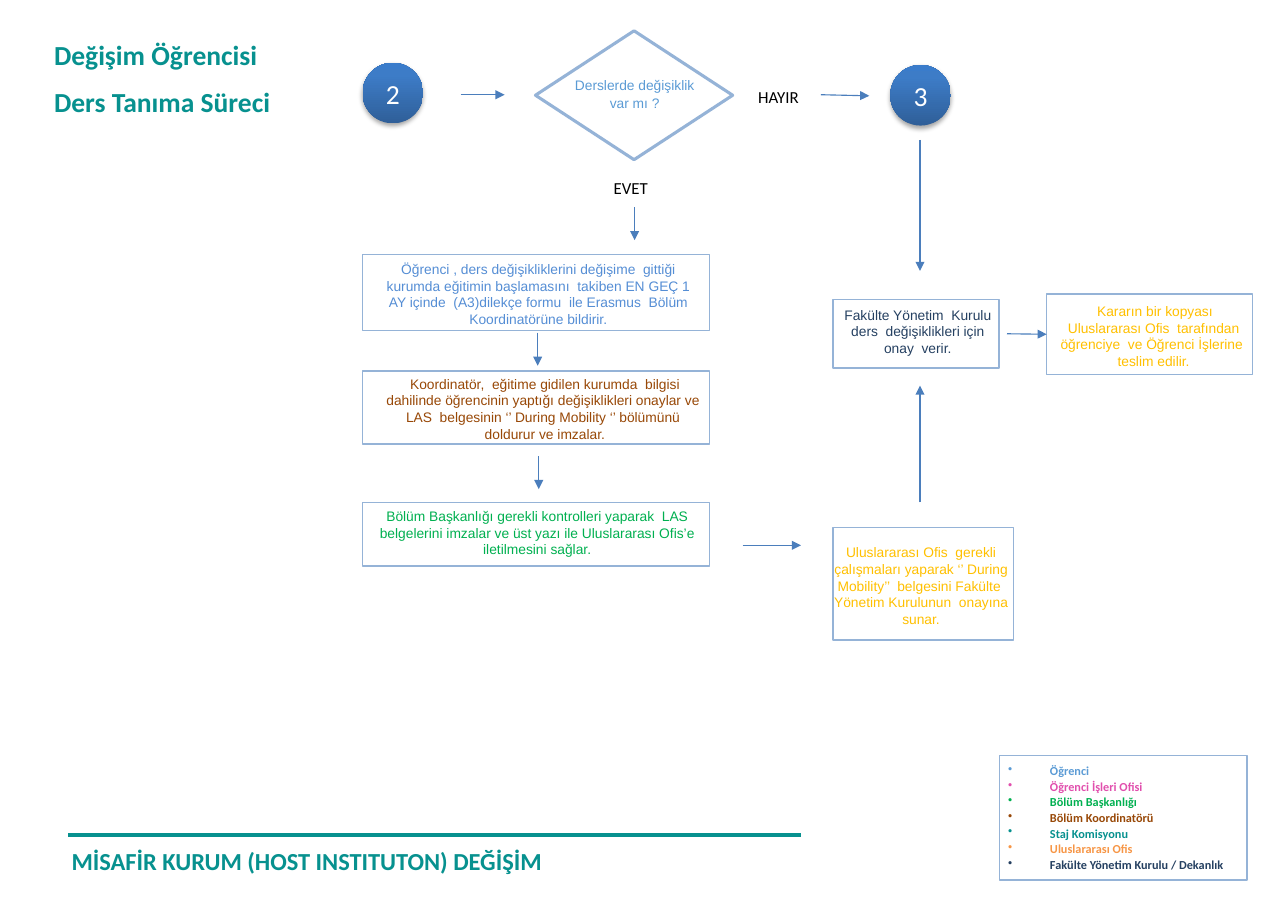
from lxml import etree
from pptx import Presentation
from pptx.dml.color import RGBColor
from pptx.enum.shapes import MSO_CONNECTOR as CONNECTOR, MSO_SHAPE as SHAPE
from pptx.enum.text import MSO_ANCHOR as ANCHOR, PP_ALIGN as ALIGN
from pptx.oxml import parse_xml
from pptx.oxml.ns import nsdecls, qn
from pptx.util import Pt

PX = 9144
PAGE = (1169, 827)
TEAL, BORDER, ARROW = '07918F', '95B3D7', '4B7EBC'

TITLE = ['Değişim Öğrencisi', 'Ders Tanıma Süreci']
FOOTER = 'MİSAFİR KURUM (HOST INSTITUTON) DEĞİŞİM'
QUESTION = 'Derslerde değişiklik var mı ?'
ANSWERS = [('HAYIR', (688, 79, 42, 15)), ('EVET', (557, 161, 37, 15))]
STEP_MARKS = [('2', (329, 57, 55, 55)), ('3', (808, 59, 55, 55))]

# name: text, colour, area, insets (left, top, right), first-line indent
STEPS = {
    'student': (
        'Öğrenci , ders değişikliklerini değişime  gittiği kurumda eğitimin '
        'başlamasını  takiben EN GEÇ 1 AY içinde  (A3)dilekçe formu  ile '
        'Erasmus  Bölüm Koordinatörüne bildirir.',
        '558ED5', (329, 231, 315, 69), (20, 6, 16), 0),
    'coordinator': (
        'Koordinatör,  eğitime gidilen kurumda  bilgisi dahilinde öğrencinin '
        'yaptığı değişiklikleri onaylar ve  LAS  belgesinin ‘’ During Mobility '
        '‘’ bölümünü  doldurur ve imzalar.',
        '984807', (329, 337, 315, 66), (18, 4, 2), 0),
    'department': (
        'Bölüm Başkanlığı gerekli kontrolleri yaparak  LAS belgelerini imzalar '
        've üst yazı ile Uluslararası Ofis’e iletilmesini sağlar.',
        '00B050', (329, 456, 315, 58), (2, 5, 0), 0),
    'office': (
        'Uluslararası Ofis  gerekli çalışmaları yaparak ‘’ During Mobility’’  '
        'belgesini Fakülte  Yönetim Kurulunun  onayına sunar.',
        'FFC000', (756, 479, 164, 102), (1, 15, 5), 0),
    'board': (
        'Fakülte Yönetim  Kurulu ders  değişiklikleri için onay  verir.',
        '254061', (756, 272, 151, 62), (3, 6, 0), 0),
    'decision': (
        'Kararın bir kopyası  Uluslararası Ofis  tarafından öğrenciye  ve '
        'Öğrenci İşlerine  teslim edilir.',
        'FFC000', (950, 267, 187, 73), (12, 8, 5), 6),
}

ARROWS = [
    (418, 86, 458, 86), (745, 86, 789, 87), (576, 188, 576, 218),
    (835, 127, 835, 246), (488, 302, 488, 332), (489, 414, 489, 444),
    (835, 456, 835, 350), (674, 495, 727, 495),
]
TO_DECISION = (914, 303, 950, 303)

LEGEND = [
    ('Öğrenci', '5B9BD5'), ('Öğrenci İşleri Ofisi', 'E14FAD'),
    ('Bölüm Başkanlığı', '00B050'), ('Bölüm Koordinatörü', '984807'),
    ('Staj Komisyonu', TEAL), ('Uluslararası Ofis', 'F79646'),
    ('Fakülte Yönetim Kurulu / Dekanlık', '254061'),
]

STEP_FONT = {'name': 'Arial', 'size': Pt(9)}
ANSWER_FONT = {'name': 'Calibri', 'size': Pt(11)}
MARK_FONT = {'name': 'Calibri', 'size': Pt(18)}
TITLE_FONT = {'name': 'Calibri', 'size': Pt(18), 'bold': True}
FOOTER_FONT = {'name': 'Calibri', 'size': Pt(16), 'bold': True}
LEGEND_FONT = {'name': 'Calibri', 'size': Pt(8), 'bold': True}

CENTERED = {'alignment': ALIGN.CENTER}
LEFT = {'alignment': ALIGN.LEFT}
SPACED = {**LEFT, 'line_spacing': 1.07}

MARK_FILL = [(0, '2F5F99'), (80, '3D7CC7'), (100, '3A7CCB')]


def emu(lengths):
    return [length * PX for length in lengths]


def rgb(color):
    return RGBColor.from_string(color)


def set_all(target, values):
    for name, value in values.items():
        setattr(target, name, value)


def write(holder, lines, font, layout, insets=(0, 0, 0), wrap=True, anchor=ANCHOR.TOP):
    frame = holder.text_frame
    left, top, right = emu(insets)
    set_all(frame, {'margin_left': left, 'margin_top': top, 'margin_right': right,
                    'margin_bottom': 0, 'word_wrap': wrap, 'vertical_anchor': anchor})
    for index, (words, color) in enumerate(lines):
        paragraph = frame.add_paragraph() if index else frame.paragraphs[0]
        set_all(paragraph, layout)
        run = paragraph.add_run()
        run.text = words
        set_all(run.font, font)
        run.font.color.rgb = rgb(color)
    return frame.paragraphs


def indent(paragraph, margin, first):
    props = paragraph._p.get_or_add_pPr()
    props.set('marL', str(margin * PX))
    props.set('indent', str(first * PX))
    return props


def add_outline(preset, area, width):
    shape = slide.shapes.add_shape(preset, *emu(area))
    shape.shadow.inherit = False
    shape.fill.background()
    shape.line.color.rgb = rgb(BORDER)
    shape.line.width = Pt(width)
    return shape


def add_mark(area):
    mark = slide.shapes.add_shape(SHAPE.OVAL, *emu(area))
    mark.shadow.inherit = False
    mark.line.fill.background()
    mark.fill.background()
    stops = ''.join(f'<a:gs pos="{pos * 1000}"><a:srgbClr val="{color}"/></a:gs>'
                    for pos, color in MARK_FILL)
    props = mark.element.spPr
    props.replace(props.find(qn('a:noFill')), parse_xml(
        f'<a:gradFill {nsdecls("a")} rotWithShape="1"><a:gsLst>{stops}</a:gsLst>'
        '<a:lin ang="16200000" scaled="0"/></a:gradFill>'))
    props.find(qn('a:effectLst')).append(parse_xml(
        f'<a:outerShdw {nsdecls("a")} blurRad="40000" dist="23000" dir="5400000" '
        'rotWithShape="0"><a:srgbClr val="000000"><a:alpha val="35000"/></a:srgbClr>'
        '</a:outerShdw>'))
    return mark


def add_line(ends, color, width, arrow=True):
    line = slide.shapes.add_connector(CONNECTOR.STRAIGHT, *emu(ends))
    line.line.color.rgb = rgb(color)
    line.line.width = Pt(width)
    props = line.element.spPr
    if arrow:
        etree.SubElement(props.find(qn('a:ln')), qn('a:tailEnd'), type='triangle')
    etree.SubElement(props, qn('a:effectLst'))
    return line


def add_text(area, *args, **options):
    return write(slide.shapes.add_textbox(*emu(area)), *args, **options)


deck = Presentation()
deck.slide_width, deck.slide_height = emu(PAGE)
slide = deck.slides.add_slide(deck.slide_layouts[6])

add_text((49, 32, 232, 89), [(words, TEAL) for words in TITLE], TITLE_FONT,
         {**SPACED, 'space_after': Pt(8)})

add_outline(SHAPE.FLOWCHART_DECISION, (486, 28, 179, 117), 2)
add_text((519, 68, 114, 31), [(QUESTION, '5B9BD5')], STEP_FONT,
         {**CENTERED, 'line_spacing': Pt(11.8)})
for answer, area in ANSWERS:
    add_text(area, [(answer, '000000')], ANSWER_FONT, LEFT, wrap=False)

for number, area in STEP_MARKS:
    write(add_mark(area), [(number, 'FFFFFF')], MARK_FONT, CENTERED, anchor=ANCHOR.MIDDLE)

boxes = {}
for step, (words, color, area, insets, first) in STEPS.items():
    boxes[step] = add_outline(SHAPE.RECTANGLE, area, 1)
    [paragraph] = write(boxes[step], [(words, color)], STEP_FONT, CENTERED, insets)
    indent(paragraph, 0, first)

for ends in ARROWS:
    add_line(ends, ARROW, 0.75)
add_line(TO_DECISION, ARROW, 0.75).end_connect(boxes['decision'], 1)

add_line((62, 758, 727, 758), TEAL, 2.25, arrow=False)
add_text((65, 781, 679, 10), [(FOOTER, TEAL)], FOOTER_FONT,
         {**LEFT, 'line_spacing': Pt(9.6)})

legend = add_outline(SHAPE.RECTANGLE, (907, 686, 225, 113), 1)
for paragraph in write(legend, LEGEND, LEGEND_FONT, SPACED, (8, 6, 8)):
    etree.SubElement(indent(paragraph, 38, -38), qn('a:buChar'), char='•')

deck.save('out.pptx')
